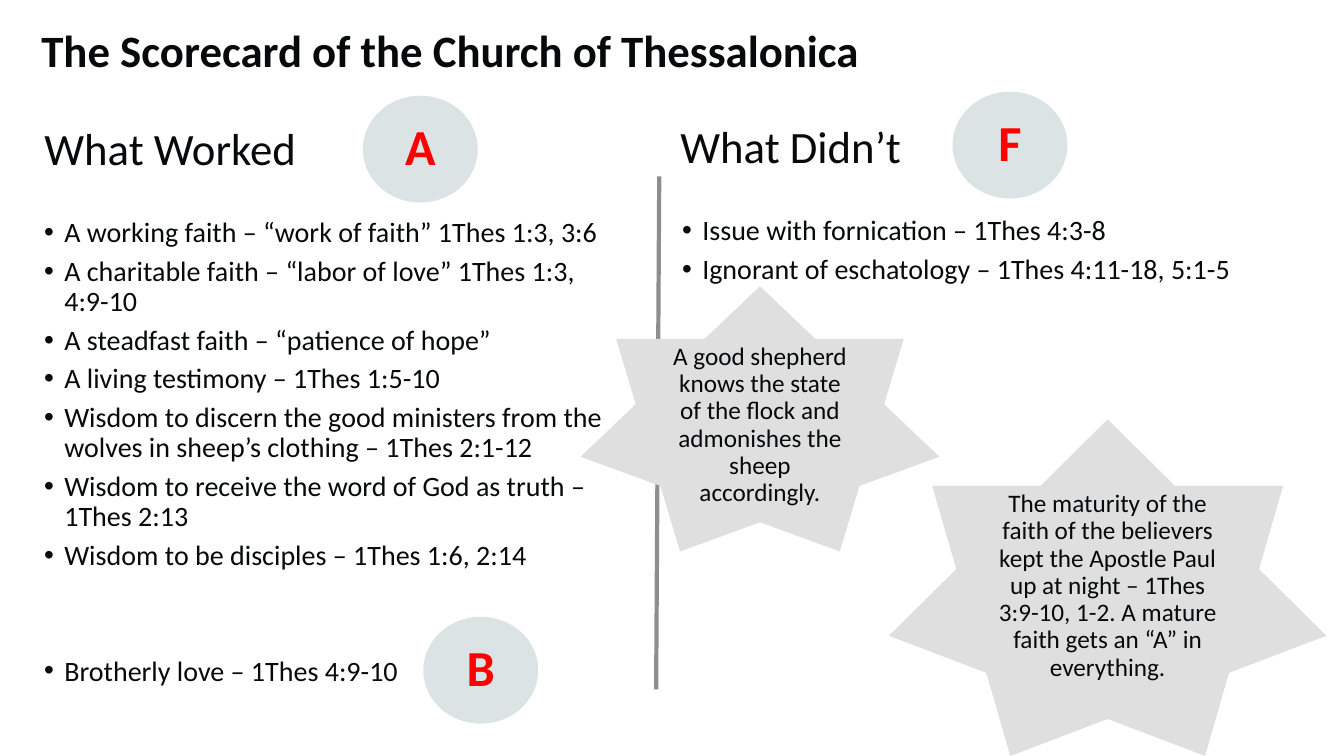
from lxml import etree
from pptx import Presentation
from pptx.dml.color import RGBColor
from pptx.enum.shapes import MSO_CONNECTOR, MSO_SHAPE
from pptx.enum.text import MSO_ANCHOR, MSO_AUTO_SIZE, PP_ALIGN
from pptx.oxml.ns import qn
from pptx.util import Pt

LEFT, CENTER = PP_ALIGN.LEFT, PP_ALIGN.CENTER
TOP, MIDDLE, BOTTOM = MSO_ANCHOR.TOP, MSO_ANCHOR.MIDDLE, MSO_ANCHOR.BOTTOM
OVAL, STAR = MSO_SHAPE.OVAL, MSO_SHAPE.STAR_7_POINT

FONT = "Calibri"
COLORS = {"text": "07090A", "grade": "FF0000", "badge": "DCE3E4",
          "star": "DFDFDF", "divider": "5F5F5F"}


def color(name):
    return RGBColor.from_string(COLORS[name])


def write(shape, lines, size, anchor=TOP, align=LEFT, spacing=0.9,
          bold=False, ink="text", margins=(7.2, 3.6)):
    """Fill a shape with one formatted paragraph per line and return them."""
    frame = shape.text_frame
    frame.word_wrap = True
    frame.auto_size = MSO_AUTO_SIZE.NONE
    frame.vertical_anchor = anchor
    frame.margin_left = frame.margin_right = Pt(margins[0])
    frame.margin_top = frame.margin_bottom = Pt(margins[1])
    for index, line in enumerate(lines):
        paragraph = frame.add_paragraph() if index else frame.paragraphs[0]
        paragraph.alignment = align
        paragraph.line_spacing = spacing
        paragraph.space_before = Pt(0)
        run = paragraph.add_run()
        run.text = line
        run.font.name = FONT
        run.font.size = Pt(size)
        run.font.bold = bold
        run.font.color.rgb = color(ink)
    return frame.paragraphs


presentation = Presentation()
presentation.slide_width, presentation.slide_height = Pt(960), Pt(540)
slide = presentation.slides.add_slide(presentation.slide_layouts[5])
shapes = slide.shapes

# Title
title = shapes.title
title.left, title.top, title.width, title.height = Pt(29.5), Pt(0), Pt(739.5), Pt(54.7)
write(title, ["The Scorecard of the Church of Thessalonica"], 32,
      anchor=BOTTOM, spacing=0.8, bold=True, margins=(0, 0))

# Divider between the columns
divider = shapes.add_connector(MSO_CONNECTOR.STRAIGHT, Pt(470.9), Pt(126), Pt(468.7), Pt(492.5))
divider.line.width = Pt(3)
divider.line.color.rgb = color("divider")
properties = divider._element.spPr
etree.SubElement(properties.find(".//" + qn("a:srgbClr")), qn("a:alpha"), val="69000")
etree.SubElement(properties, qn("a:effectLst"))

# Columns: heading, heading box, list box, list items
columns = [
    ("What Worked", (31.7, 85.7, 404.6, 38.9), (24.5, 152.6, 424.8, 362.9), [
        "A working faith – “work of faith” 1Thes 1:3, 3:6",
        "A charitable faith – “labor of love” 1Thes 1:3, 4:9-10",
        "A steadfast faith – “patience of hope”",
        "A living testimony – 1Thes 1:5-10",
        "Wisdom to discern the good ministers from the wolves in sheep’s clothing – 1Thes 2:1-12",
        "Wisdom to receive the word of God as truth – 1Thes 2:13",
        "Wisdom to be disciples – 1Thes 1:6, 2:14",
        "Brotherly love – 1Thes 4:9-10",
    ]),
    ("What Didn’t", (486, 79.2, 404.6, 43.9), (480.2, 151.2, 455.8, 331.2), [
        "Issue with fornication – 1Thes 4:3-8",
        "Ignorant of eschatology – 1Thes 4:11-18, 5:1-5",
    ]),
]
item_lists = []
for heading, heading_box, list_box, items in columns:
    heading_shape = shapes.add_textbox(*map(Pt, heading_box))
    write(heading_shape, [heading], 32, anchor=BOTTOM, spacing=0.8, margins=(0, 0))
    list_shape = shapes.add_textbox(*map(Pt, list_box))
    paragraphs = write(list_shape, items, 20)
    for paragraph in paragraphs:
        paragraph.space_before = Pt(6)
        paragraph_properties = paragraph._p.get_or_add_pPr()
        paragraph_properties.set("marL", str(Pt(14.4)))
        paragraph_properties.set("indent", str(-Pt(14.4)))
        etree.SubElement(paragraph_properties, qn("a:buFont"), typeface="Arial")
        etree.SubElement(paragraph_properties, qn("a:buChar"), char="•")
    item_lists.append(paragraphs)
# The last item of the first column stands apart, beside its own grade
item_lists[0][-1].space_before = Pt(61)

# Grade badges and star callouts
badge_style = {"size": 36, "anchor": MIDDLE, "bold": True, "ink": "grade"}
star_style = {"size": 18}
callouts = [
    (OVAL, "badge", (259.2, 68.4, 82.1, 76.3), "A", badge_style),
    (OVAL, "badge", (680.4, 65.5, 82.1, 76.3), "F", badge_style),
    (OVAL, "badge", (302.4, 440.6, 82.1, 76.3), "B", badge_style),
    (STAR, "star", (414.7, 204.5, 256.3, 189.4),
     "A good shepherd knows the state of the flock and admonishes the sheep accordingly.",
     star_style),
    (STAR, "star", (635, 299.5, 312.5, 240.5),
     "The maturity of the faith of the believers kept the Apostle Paul up at night – "
     "1Thes 3:9-10, 1-2. A mature faith gets an “A” in everything.", star_style),
]
for kind, fill, box, text, style in callouts:
    callout = shapes.add_shape(kind, *map(Pt, box))
    callout.shadow.inherit = False
    callout.fill.solid()
    callout.fill.fore_color.rgb = color(fill)
    callout.line.fill.background()
    write(callout, [text], align=CENTER, **style)

presentation.save("out.pptx")
